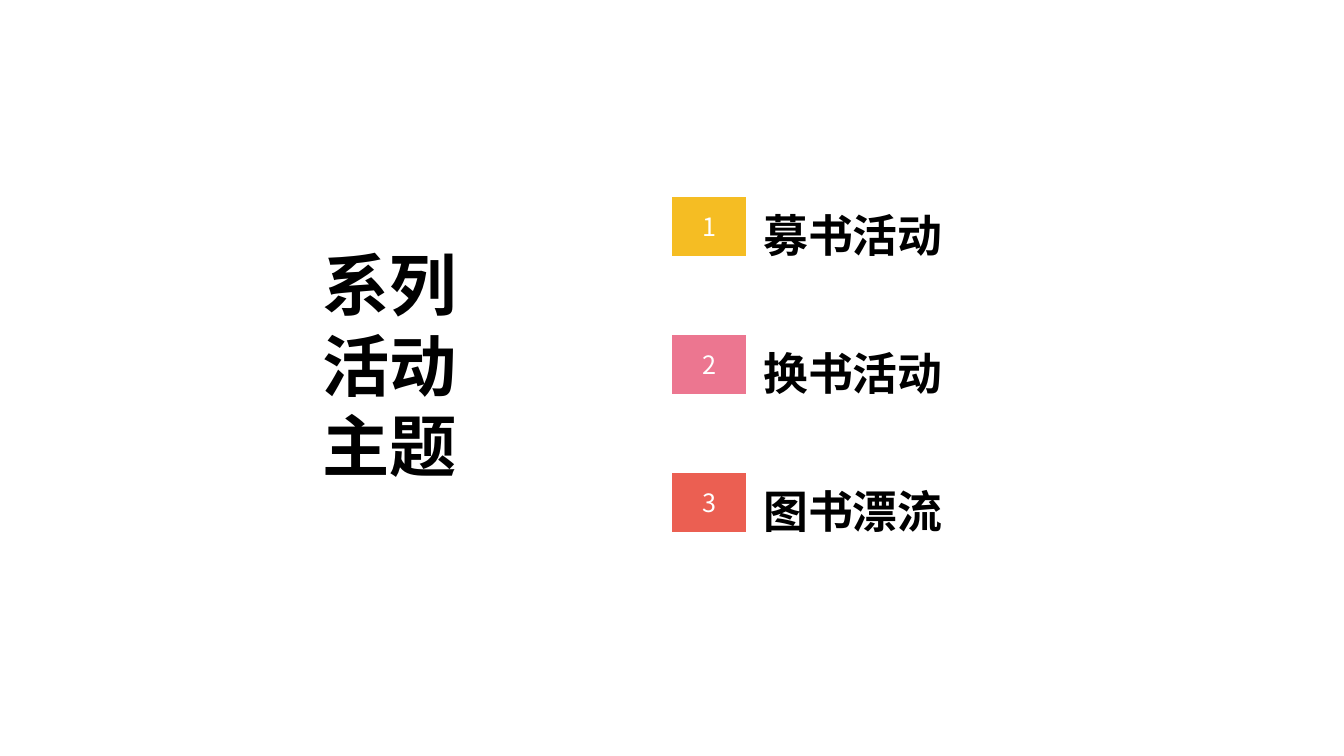
from dataclasses import dataclass

from lxml.etree import SubElement
from pptx import Presentation
from pptx.dml.color import RGBColor
from pptx.enum.shapes import MSO_SHAPE
from pptx.enum.text import MSO_ANCHOR, PP_ALIGN
from pptx.oxml.ns import qn
from pptx.util import Inches, Pt


@dataclass(frozen=True)
class Theme:
    white: str = "FFFFFF"
    black: str = "000000"
    badges: tuple = ("F5BD23", "EC7690", "EB5F52")
    cjk_font: str = "Noto Sans CJK SC"
    label_font: str = "Calibri"
    title_size: int = 48
    label_size: int = 32
    number_size: int = 18
    title_opacity: int = 78


THEME = Theme()
ACTIVITIES = ("募书活动", "换书活动", "图书漂流")


def write(s, text, size, color, font=THEME.cjk_font, bold=False,
          align=PP_ALIGN.CENTER):
    """Put one styled paragraph, vertically centred, into a shape."""
    tf = s.text_frame
    tf.word_wrap = True
    tf.vertical_anchor = MSO_ANCHOR.MIDDLE
    p = tf.paragraphs[0]
    p.text = text
    p.alignment = align
    p.font.size = Pt(size)
    p.font.bold = bold
    p.font.color.rgb = RGBColor.from_string(color)
    p.font.name = font
    # East Asian typeface for the Chinese characters
    ea = SubElement(p._p.pPr.find(qn("a:defRPr")), qn("a:ea"))
    ea.set("typeface", THEME.cjk_font)


def add_filled(slide, kind, left, top, width, height, color):
    s = slide.shapes.add_shape(kind, Inches(left), Inches(top),
                               Inches(width), Inches(height))
    s.shadow.inherit = False
    s.fill.solid()
    s.fill.fore_color.rgb = RGBColor.from_string(color)
    s.line.fill.background()
    return s


def add_title(slide, left, top, size):
    """Translucent disc holding the title."""
    s = add_filled(slide, MSO_SHAPE.OVAL, left, top, size, size, THEME.white)
    color = s.fill._xPr.find(qn("a:solidFill"))[0]
    SubElement(color, qn("a:alpha")).set("val", str(THEME.title_opacity * 1000))
    write(s, "系列活动主题", THEME.title_size, THEME.black, bold=True)


def add_activity(slide, left, top, number, name, color):
    """Numbered badge with the activity name to its right."""
    s = add_filled(slide, MSO_SHAPE.PARALLELOGRAM, left, top, 0.73, 0.59, color)
    s.adjustments[0] = 0
    write(s, str(number), THEME.number_size, THEME.white)

    label = slide.shapes.add_textbox(Inches(left + 0.85), Inches(top),
                                     Inches(3.02), Inches(0.76))
    tf = label.text_frame
    tf.margin_left = tf.margin_right = Inches(0.05)
    tf.margin_top = tf.margin_bottom = Inches(0.05)
    write(label, name, THEME.label_size, THEME.black, THEME.label_font,
          bold=True, align=PP_ALIGN.LEFT)


def add_activities(slide, left, top, pitch):
    for i, (name, color) in enumerate(zip(ACTIVITIES, THEME.badges)):
        add_activity(slide, left, top + i * pitch, i + 1, name, color)


def main():
    prs = Presentation()
    prs.slide_width, prs.slide_height = Inches(13.33), Inches(7.5)
    slide = prs.slides.add_slide(prs.slide_layouts[6])
    add_activities(slide, 6.67, 1.95, 1.37)
    add_title(slide, 2.51, 2.26, 2.71)
    prs.save("out.pptx")


if __name__ == "__main__":
    main()
